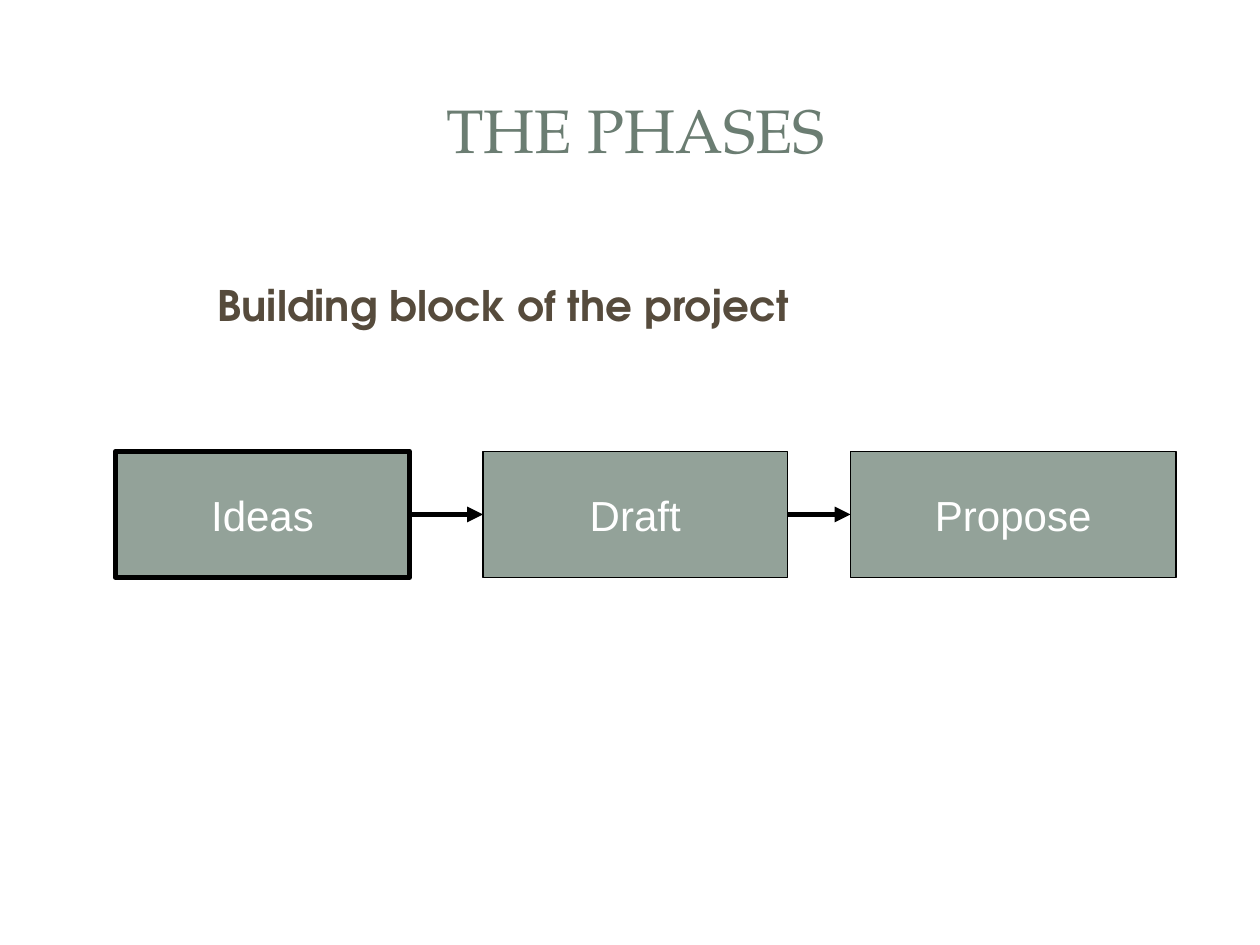
"""Build the slide that shows the phases of the project as a chain of boxes."""
from dataclasses import dataclass
from itertools import pairwise

from lxml import etree
from pptx import Presentation
from pptx.dml.color import RGBColor
from pptx.enum import shapes, text
from pptx.oxml import ns
from pptx.util import Pt

SAGE = RGBColor(0x93, 0xA2, 0x99)
GREEN = RGBColor(0x6B, 0x7D, 0x72)
BROWN = RGBColor(0x56, 0x4B, 0x3C)
BLACK = RGBColor(0, 0, 0)
WHITE = RGBColor(255, 255, 255)
TOP, HIGH = 258, 72
RIGHT, LEFT = 3, 1


@dataclass
class Phase:
    name: str
    left: float
    width: float
    edge: float = 1


PHASES = [
    Phase("Ideas", 66, 168, 3),
    Phase("Draft", 276, 174),
    Phase("Propose", 486, 186),
]


def place(shape, left: float, top: float, width: float, high: float) -> None:
    shape.left, shape.top = Pt(left), Pt(top)
    shape.width, shape.height = Pt(width), Pt(high)


def write(para, words: str, face: str, size: float, color: RGBColor, bold: bool = False) -> None:
    run = para.add_run()
    run.text = words
    font = run.font
    font.name, font.size, font.bold = face, Pt(size), bold
    font.color.rgb = color


def add_box(slide, phase: Phase):
    box = slide.shapes.add_shape(
        shapes.MSO_SHAPE.RECTANGLE, Pt(phase.left), Pt(TOP), Pt(phase.width), Pt(HIGH))
    box.shadow.inherit = False
    box.fill.solid()
    box.fill.fore_color.rgb = SAGE
    box.line.color.rgb = BLACK
    box.line.width = Pt(phase.edge)
    frame = box.text_frame
    frame.word_wrap = False
    frame.vertical_anchor = text.MSO_ANCHOR.MIDDLE
    para = frame.paragraphs[0]
    para.alignment = text.PP_ALIGN.CENTER
    write(para, phase.name, "Arial", 24, WHITE)
    return box


def add_arrow(slide, start, end) -> None:
    arrow = slide.shapes.add_connector(shapes.MSO_CONNECTOR.STRAIGHT, 0, 0, 0, 0)
    arrow.begin_connect(start, RIGHT)
    arrow.end_connect(end, LEFT)
    arrow.line.color.rgb = BLACK
    arrow.line.width = Pt(3)
    props = arrow._element.spPr
    etree.SubElement(props.find(ns.qn("a:ln")), ns.qn("a:tailEnd"), type="triangle")
    etree.SubElement(props, ns.qn("a:effectLst"))


def add_title(slide) -> None:
    title = slide.shapes.title
    place(title, 34, 32.5, 650, 82)
    title.text_frame.vertical_anchor = text.MSO_ANCHOR.MIDDLE
    para = title.text_frame.paragraphs[0]
    para.alignment = text.PP_ALIGN.CENTER
    write(para, " ", "TeX Gyre Pagella", 35, GREEN, True)
    write(para, "THE PHASES", "TeX Gyre Pagella", 35, GREEN)


def add_body(slide) -> None:
    body = slide.placeholders[1]
    place(body, 108, 156, 540, 72)
    para = body.text_frame.paragraphs[0]
    props = para._p.get_or_add_pPr()
    props.set("marL", str(Pt(27)))
    props.set("indent", str(Pt(-18)))
    etree.SubElement(props, ns.qn("a:buNone"))
    write(para, "Building block of the project", "TeX Gyre Adventor", 24, BROWN, True)


def main() -> None:
    deck = Presentation()
    deck.slide_width, deck.slide_height = Pt(720), Pt(540)
    slide = deck.slides.add_slide(deck.slide_layouts[1])
    slide.background.fill.solid()
    slide.background.fill.fore_color.rgb = WHITE
    add_title(slide)
    add_body(slide)
    boxes = [add_box(slide, phase) for phase in PHASES]
    for start, end in pairwise(boxes):
        add_arrow(slide, start, end)
    deck.save("out.pptx")


if __name__ == "__main__":
    main()
